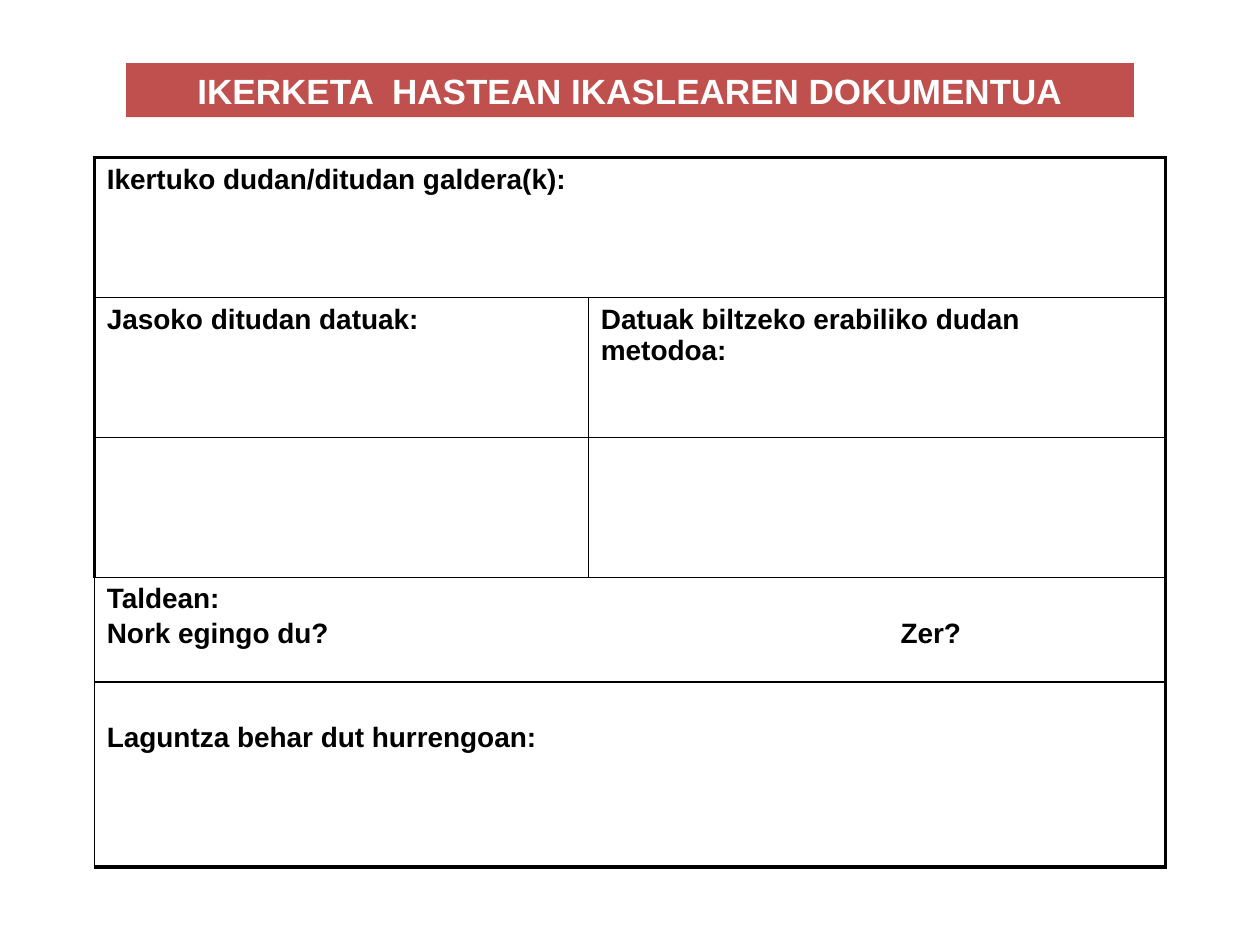
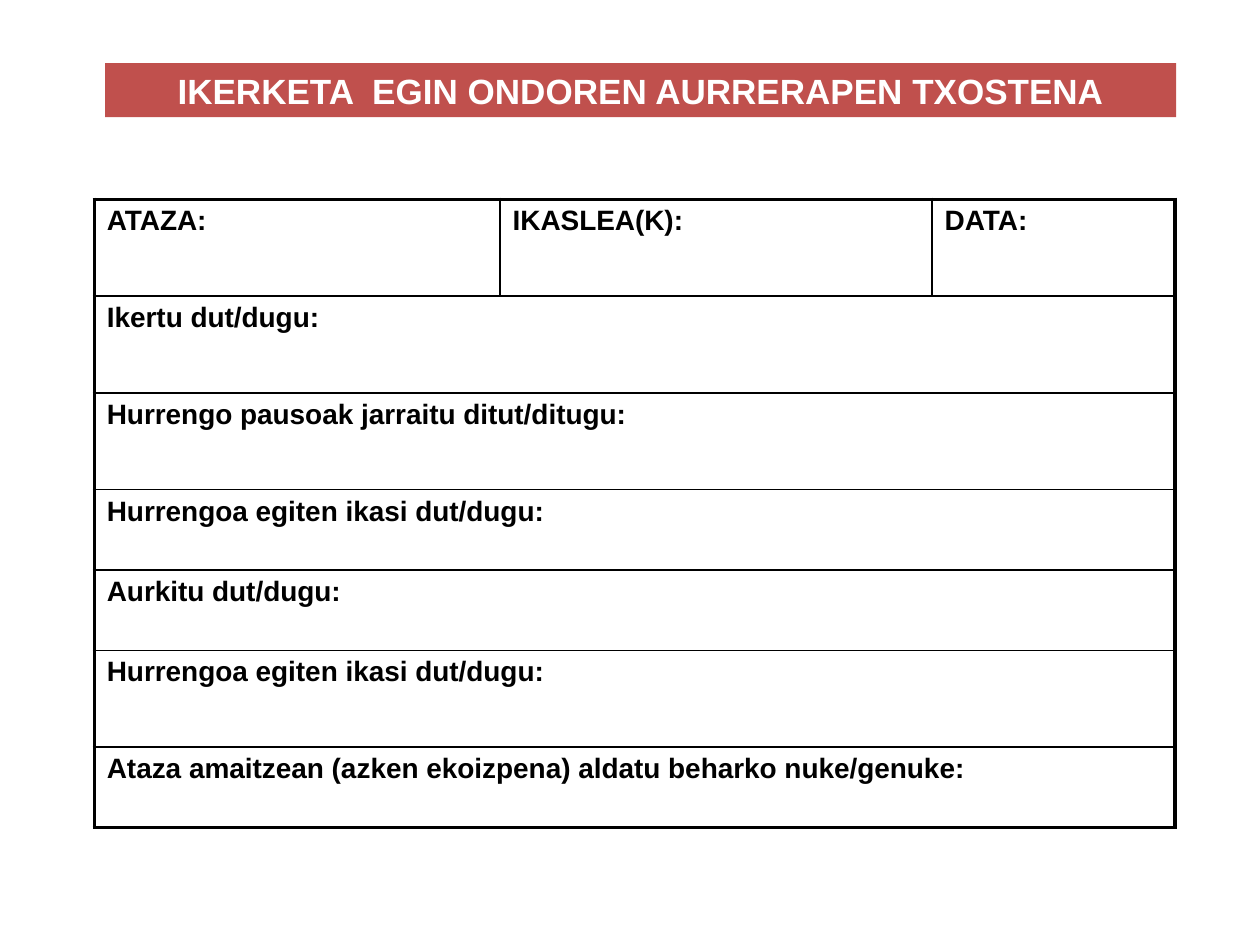
from lxml.etree import SubElement
from pptx import Presentation
from pptx.dml.color import RGBColor
from pptx.enum.text import MSO_ANCHOR, MSO_AUTO_SIZE, PP_ALIGN
from pptx.oxml.ns import qn
from pptx.util import Cm, Pt

COLORS = {"band": "C0504D", "title": "FFFFFF", "text": "000000", "border": "000000"}
FONT = "Arial"
THICK, THIN = 2.25, 1
TITLE_TOP, TITLE_HEIGHT = 1.27, 1.09
TABLE_LEFT = 1.9
ANSWER_TAB = 16
LABEL_DROP = 0.81  # top margin of a label that starts one line lower


def add_run(paragraph, text, size, color):
    run = paragraph.add_run()
    run.text = text
    run.font.name = FONT
    run.font.size = Pt(size)
    run.font.bold = True
    run.font.color.rgb = RGBColor.from_string(COLORS[color])


def add_title_band(slide, text, left, width):
    title = slide.shapes.title
    title.left, title.top = Cm(left), Cm(TITLE_TOP)
    title.width, title.height = Cm(width), Cm(TITLE_HEIGHT)
    title.fill.solid()
    title.fill.fore_color.rgb = RGBColor.from_string(COLORS["band"])
    frame = title.text_frame
    frame.auto_size = MSO_AUTO_SIZE.NONE
    frame.word_wrap = True
    frame.vertical_anchor = MSO_ANCHOR.MIDDLE
    paragraph = frame.paragraphs[0]
    paragraph.alignment = PP_ALIGN.CENTER
    add_run(paragraph, text, 20, "title")


def add_tab_stop(paragraph, position):
    properties = paragraph._p.get_or_add_pPr()
    tab_list = SubElement(properties, qn("a:tabLst"))
    SubElement(tab_list, qn("a:tab"), pos=str(Cm(position)), algn="l")


def set_borders(cell, widths):
    """Draw the sides of a cell; widths maps L, R, T and B to points."""
    properties = cell._tc.get_or_add_tcPr()
    for side, width in widths.items():
        line = SubElement(properties, qn(f"a:ln{side}"), w=str(Pt(width)))
        fill = SubElement(line, qn("a:solidFill"))
        SubElement(fill, qn("a:srgbClr"), val=COLORS["border"])


def write_label(cell, text):
    for index, line in enumerate(text.split("\n")):
        frame = cell.text_frame
        paragraph = frame.add_paragraph() if index else frame.paragraphs[0]
        if index:
            paragraph.space_before = Pt(2)
        if "\t" in line:
            add_tab_stop(paragraph, ANSWER_TAB)
        add_run(paragraph, line, 16, "text")


def add_form(slide, top, column_widths, rows, thin_left_rows=()):
    """Add a form table; a row with a single label spans every column."""
    row_count, column_count = len(rows), len(column_widths)
    heights = [height for height, _ in rows]
    table = slide.shapes.add_table(
        row_count, column_count, Cm(TABLE_LEFT), Cm(top),
        Cm(sum(column_widths)), Cm(sum(heights))).table
    table.first_row = table.horz_banding = False
    for column, width in zip(table.columns, column_widths):
        column.width = Cm(width)

    for row, (height, labels) in enumerate(rows):
        table.rows[row].height = Cm(height)
        spans_all = len(labels) == 1
        if spans_all:
            table.cell(row, 0).merge(table.cell(row, column_count - 1))
        left_edge = THIN if row in thin_left_rows else THICK
        for column in range(column_count):
            cell = table.cell(row, column)
            at_right = spans_all or column == column_count - 1
            set_borders(cell, {
                "L": THIN if column else left_edge,
                "R": THICK if at_right else THIN,
                "T": THIN if row else THICK,
                "B": THICK if row == row_count - 1 else THIN,
            })
            cell.fill.background()
        for column, label in enumerate(labels):
            if label:
                write_label(table.cell(row, column), label)
    return table


def add_form_slide(presentation, title, band_left, band_width):
    slide = presentation.slides.add_slide(presentation.slide_layouts[5])
    add_title_band(slide, title, band_left, band_width)
    return slide


def add_start_document(presentation):
    slide = add_form_slide(
        presentation, "IKERKETA  HASTEAN IKASLEAREN DOKUMENTUA", 2.54, 20.32)
    rows = [
        (2.82, ["Ikertuko dudan/ditudan galdera(k):"]),
        (2.82, ["Jasoko ditudan datuak:",
                "Datuak biltzeko erabiliko dudan metodoa:"]),
        (2.82, ["", ""]),
        (2.11, ["Taldean:\nNork egingo du?\tZer?"]),
        (3.73, ["Laguntza behar dut hurrengoan:"]),
    ]
    table = add_form(slide, 3.18, [9.96, 11.63], rows, thin_left_rows=(3, 4))
    table.cell(4, 0).margin_top = Cm(LABEL_DROP)


def add_progress_report(presentation):
    slide = add_form_slide(
        presentation, "IKERKETA  EGIN ONDOREN AURRERAPEN TXOSTENA", 2.12, 21.59)
    tall, short = 1.95, 1.62
    rows = [
        (tall, ["ATAZA:", "IKASLEA(K):", "DATA:"]),
        (tall, ["Ikertu dut/dugu:"]),
        (tall, ["Hurrengo pausoak jarraitu ditut/ditugu:"]),
        (short, ["Hurrengoa egiten ikasi dut/dugu:"]),
        (short, ["Aurkitu dut/dugu:"]),
        (tall, ["Hurrengoa egiten ikasi dut/dugu:"]),
        (short, ["Ataza amaitzean (azken ekoizpena) aldatu beharko nuke/genuke:"]),
    ]
    add_form(slide, 4.02, [8.18, 8.71, 4.9], rows)


def main():
    presentation = Presentation()
    presentation.slide_width, presentation.slide_height = Cm(25.4), Cm(19.05)
    add_start_document(presentation)
    add_progress_report(presentation)
    presentation.save("out.pptx")


if __name__ == "__main__":
    main()
